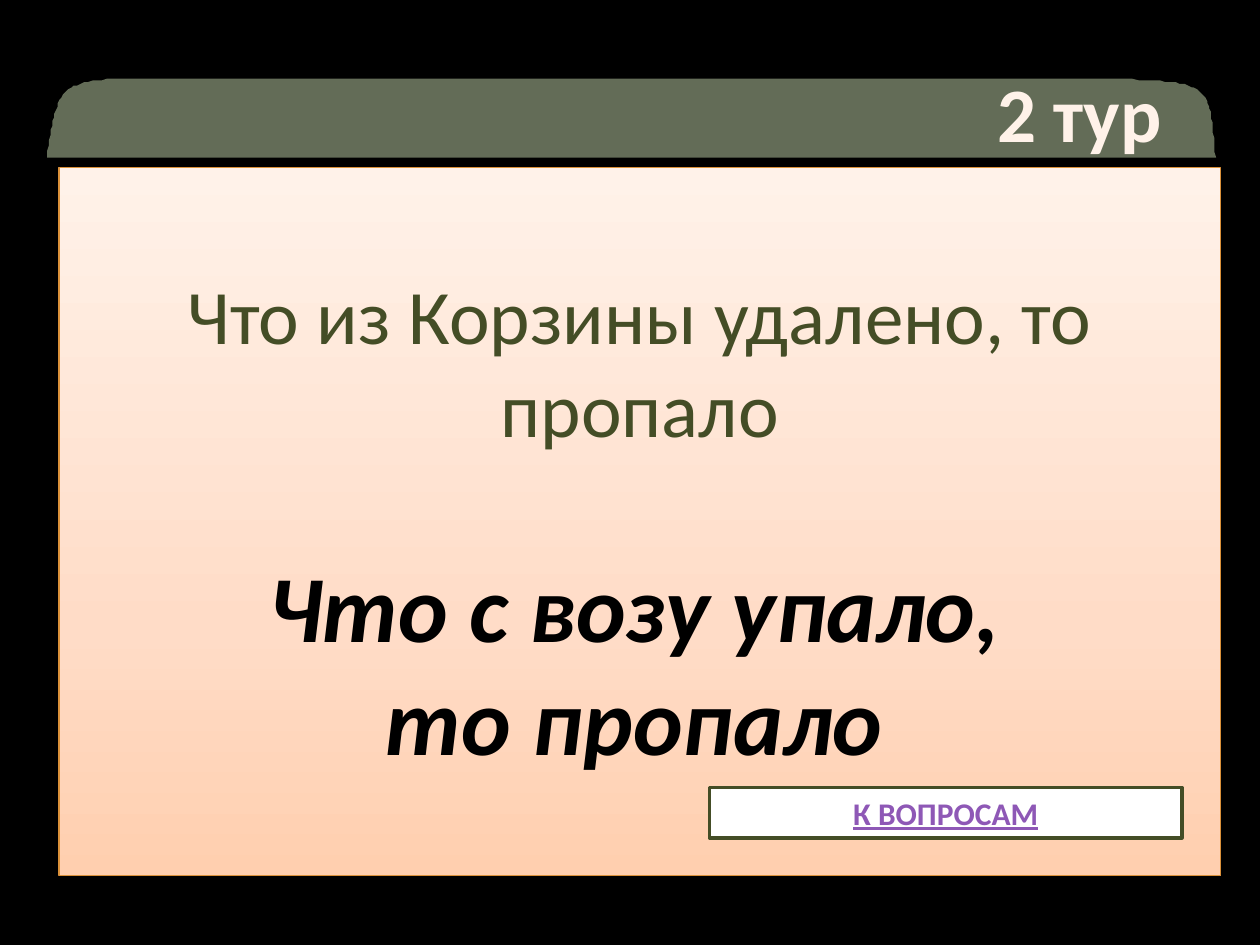
from copy import deepcopy
from dataclasses import dataclass

from lxml.etree import SubElement
from pptx import Presentation
from pptx.dml.color import RGBColor
from pptx.enum.shapes import MSO_SHAPE as Shape
from pptx.enum.text import MSO_ANCHOR as Anchor, PP_ALIGN as Align
from pptx.oxml.ns import qn
from pptx.util import Pt

COLOURS = {
    "background": "000000", "header": "A5B592", "cream": "FFF2E9",
    "peach": "FFDCC7", "apricot": "FFCFAF", "orange": "DB913A",
    "olive": "444D26", "white": "FFFFFF", "black": "000000", "violet": "8E58B6",
}
Point = tuple[float, float]


@dataclass(frozen=True)
class Box:
    left: float
    top: float
    width: float
    height: float


@dataclass(frozen=True)
class Caption:
    text: str
    size: float
    colour: str
    bold: bool = False
    italic: bool = False
    underline: bool = False
    wrap: bool = True
    anchor: Anchor = Anchor.TOP
    top_inset: float = 3.6


def rgb(name: str) -> RGBColor:
    return RGBColor.from_string(COLOURS[name])


def write(holder, caption: Caption) -> None:
    frame = holder.text_frame
    frame.word_wrap = caption.wrap
    frame.vertical_anchor = caption.anchor
    frame.margin_top = Pt(caption.top_inset)
    paragraph = frame.paragraphs[0]
    paragraph.text = caption.text
    paragraph.alignment = Align.CENTER
    font = paragraph.font
    font.name, font.size = "Calibri", Pt(caption.size)
    font.bold, font.italic, font.underline = caption.bold, caption.italic, caption.underline
    font.color.rgb = rgb(caption.colour)


def add_panel(slide, box: Box, line: str, line_width: float, caption: Caption):
    panel = slide.shapes.add_shape(
        Shape.RECTANGLE, Pt(box.left), Pt(box.top), Pt(box.width), Pt(box.height))
    panel.shadow.inherit = False
    panel.line.color.rgb = rgb(line)
    panel.line.width = Pt(line_width)
    write(panel, caption)
    return panel


def add_label(slide, box: Box, caption: Caption) -> None:
    label = slide.shapes.add_textbox(
        Pt(box.left), Pt(box.top), Pt(box.width), Pt(box.height))
    write(label, caption)


def bezier(start: Point, first: Point, second: Point, end: Point, steps: int = 40) -> list[Point]:
    def at(t: float) -> Point:
        weights = ((1 - t) ** 3, 3 * t * (1 - t) ** 2, 3 * t * t * (1 - t), t ** 3)
        corners = (start, first, second, end)
        return tuple(sum(w * c[axis] for w, c in zip(weights, corners)) for axis in (0, 1))

    return [at(step / steps) for step in range(1, steps + 1)]


def add_header(slide) -> None:
    lower_left, lower_right = (26.8, 90), (694.8, 90)
    upper_left, upper_right = (122.4, 45), (613.4, 45)
    outline = [
        lower_left,
        *bezier(lower_left, (35.3, 41.8), (27.4, 44.6), upper_left),
        *bezier(upper_right, (702, 45), (689, 49), lower_right),
    ]
    builder = slide.shapes.build_freeform(*lower_right, scale=Pt(1))
    builder.add_line_segments(outline, close=True)
    header = builder.convert_to_shape()
    header.shadow.inherit = False
    header.line.fill.background()
    header.fill.solid()
    header.fill.fore_color.rgb = rgb("header")
    colour = header.element.spPr.find(".//" + qn("a:srgbClr"))
    SubElement(colour, qn("a:alpha"), val="60000")


def fill_gradient(panel, names: tuple[str, ...], positions: tuple[float, ...]) -> None:
    panel.fill.gradient()
    panel.fill.gradient_angle = 90
    stop_list = panel.element.spPr.find(".//" + qn("a:gsLst"))
    stop_list.insert(1, deepcopy(stop_list[0]))
    for stop, name, position in zip(panel.fill.gradient_stops, names, positions):
        stop.color.rgb = rgb(name)
        stop.position = position


def main() -> None:
    """Build the quiz answer slide."""
    deck = Presentation()
    deck.slide_width, deck.slide_height = Pt(720), Pt(540)
    slide = deck.slides.add_slide(deck.slide_layouts[6])
    slide.background.fill.solid()
    slide.background.fill.fore_color.rgb = rgb("background")

    add_header(slide)
    add_label(slide, Box(562.3, 33.8, 109.4, 60.5),
              Caption("2 тур", 44, "cream", bold=True, wrap=False))
    question = add_panel(
        slide, Box(33.8, 95.8, 663.8, 404.6), "orange", 0.75,
        Caption("Что из Корзины удалено, то пропало", 44, "olive", top_inset=57.3))
    fill_gradient(question, ("apricot", "peach", "cream"), (0, 0.35, 1))
    add_label(slide, Box(106.6, 309.6, 511.9, 138.2),
              Caption("Что с возу упало, то пропало", 54, "black", bold=True, italic=True))
    back_button = add_panel(
        slide, Box(405.4, 450, 270, 28.8), "olive", 2,
        Caption("К ВОПРОСАМ", 18, "violet", bold=True, underline=True, anchor=Anchor.MIDDLE))
    back_button.fill.solid()
    back_button.fill.fore_color.rgb = rgb("white")

    deck.save("out.pptx")


if __name__ == "__main__":
    main()
